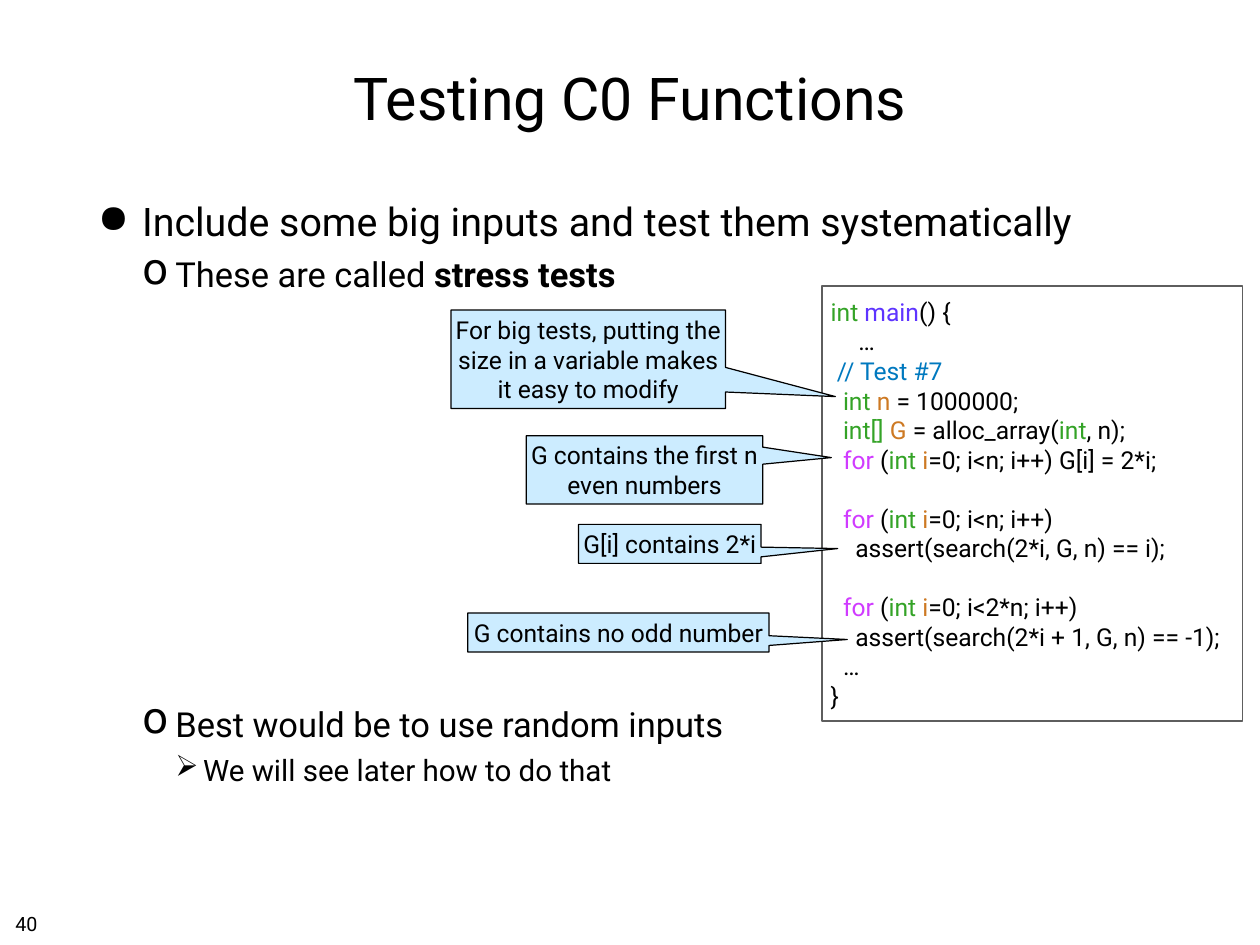
from dataclasses import dataclass

from lxml import etree
from pptx import Presentation
from pptx import util as u
from pptx.dml.color import RGBColor
from pptx.enum import shapes, text
from pptx.oxml import ns

Pt = u.Pt


@dataclass(frozen=True)
class Theme:
    font: str = "Roboto"
    ink: str = "000000"
    edge: str = "5E5E5E"
    note: str = "CCECFF"
    kind: str = "34A327"
    name: str = "5E34FF"
    var: str = "CD7923"
    word: str = "D03BFF"
    mark: str = "0079BF"
    title: int = 48
    levels: tuple = (32, 28, 24)
    code: int = 20
    page: int = 16


T = Theme()
LINE = 1.2  # line height as a share of the type size


def apply(obj, values):
    for key, val in values.items():
        setattr(obj, key, val)


def write(par, words, size, color=T.ink, bold=False):
    """Add text to a paragraph; a newline becomes a line break."""
    for i, part in enumerate(words.split("\n")):
        if i:
            par.add_line_break()
        run = par.add_run()
        run.text = part
        apply(run.font, {"name": T.font, "size": Pt(size), "bold": bold})
        run.font.color.rgb = RGBColor.from_string(color)


def setup(shape, inset, wrap=True, anchor="TOP", fit="NONE"):
    frame = shape.text_frame
    sides = ("left", "right", "top", "bottom")
    apply(frame, {f"margin_{side}": Pt(inset) for side in sides})
    apply(frame, {"word_wrap": wrap,
                  "vertical_anchor": text.MSO_ANCHOR[anchor],
                  "auto_size": text.MSO_AUTO_SIZE[fit]})
    return frame


def label(slide, box, inset=4.5, **format):
    return setup(slide.shapes.add_textbox(*map(Pt, box)), inset, **format)


def panel(slide, form, box, line, fill=None):
    shape = slide.shapes.add_shape(form, *map(Pt, box))
    shape.shadow.inherit = False
    if fill:
        shape.fill.solid()
        shape.fill.fore_color.rgb = RGBColor.from_string(fill)
    else:
        shape.fill.background()
    shape.line.color.rgb = RGBColor.from_string(line)
    shape.line.width = Pt(1)
    return shape


def pars(frame, count):
    """Return the first paragraph and as many new ones as needed."""
    return [frame.paragraphs[0]] + [frame.add_paragraph() for _ in range(count - 1)]


def bullet(par, sign, left, hang, scale):
    props = par._p.get_or_add_pPr()
    props.set("marL", str(Pt(left)))
    props.set("indent", str(Pt(-hang)))
    tint = etree.SubElement(props, ns.qn("a:buClr"))
    etree.SubElement(tint, ns.qn("a:srgbClr"), val=T.ink)
    etree.SubElement(props, ns.qn("a:buSzPct"), val=str(scale * 1000))
    etree.SubElement(props, ns.qn("a:buChar"), char=sign)


# Title
def title(slide, box):
    par = label(slide, box, anchor="MIDDLE").paragraphs[0]
    par.alignment = text.PP_ALIGN.CENTER
    write(par, "Testing C0 Functions", T.title)


# Bullet list, with room left for the code
def points(slide, box):
    marks = [("●", 36, 36, 100), ("o", 63, 27, 125), ("➢", 85.5, 22.5, 100)]
    room = 8 * (T.levels[1] * LINE + 7) + 7
    items = [
        (0, 8, [("Include some big inputs and test them systematically", False)]),
        (1, 7, [("These are called ", False), ("stress tests", True)]),
        (1, room, [("Best would be to use random inputs", False)]),
        (2, 6, [("We will see later how to do that", False)]),
    ]
    frame = label(slide, box)
    for par, (level, gap, runs) in zip(pars(frame, len(items)), items):
        apply(par, {"level": level, "space_before": Pt(gap)})
        bullet(par, *marks[level])
        for words, bold in runs:
            write(par, words, T.levels[level], bold=bold)


# Code listing
def code(slide, box):
    blank = T.code * LINE
    loop = [("for ", T.word), ("(", T.ink), ("int ", T.kind), ("i", T.var)]
    # left indent, space before, coloured runs
    lines = [
        (0, 0, [("int ", T.kind), ("main", T.name), ("() {", T.ink)]),
        (22.5, 0, [("…", T.ink)]),
        (5, 0, [("// Test #7", T.mark)]),
        (10, 0, [("int ", T.kind), ("n", T.var), (" = 1000000;", T.ink)]),
        (10, 0, [("int[] ", T.kind), ("G", T.var), (" = alloc_array(", T.ink),
                 ("int", T.kind), (", n);", T.ink)]),
        (10, 0, loop + [("=0; i<n; i++) G[i] = 2*i;", T.ink)]),
        (10, blank, loop + [("=0; i<n; i++)", T.ink)]),
        (20, 0, [("assert(search(2*i, G, n) == i);", T.ink)]),
        (10, blank, loop + [("=0; i<2*n; i++)", T.ink)]),
        (20, 0, [("assert(search(2*i + 1, G, n) == -1);", T.ink)]),
        (10, 0, [("…", T.ink)]),
        (0, 0, [("}", T.ink)]),
    ]
    shape = panel(slide, shapes.MSO_SHAPE.RECTANGLE, box, T.edge)
    frame = setup(shape, 7.2, anchor="MIDDLE", fit="SHAPE_TO_FIT_TEXT")
    for par, (left, gap, runs) in zip(pars(frame, len(lines)), lines):
        apply(par, {"alignment": text.PP_ALIGN.LEFT, "space_before": Pt(gap)})
        par._p.get_or_add_pPr().set("marL", str(Pt(left)))
        for words, color in runs:
            write(par, words, T.code, color)


# Callout whose tip is given as a share of its size, from its centre
def note(slide, box, tip, words):
    form = shapes.MSO_SHAPE.RECTANGULAR_CALLOUT
    shape = panel(slide, form, box, T.ink, T.note)
    for i, share in enumerate(tip):
        shape.adjustments[i] = share
    frame = setup(shape, 3.6, False, "MIDDLE", "SHAPE_TO_FIT_TEXT")
    par = frame.paragraphs[0]
    par.alignment = text.PP_ALIGN.CENTER
    write(par, words, T.code)


# Page number
def page(slide, box):
    write(label(slide, box, wrap=False).paragraphs[0], "40", T.page)


def main():
    deck = Presentation()
    apply(deck, {"slide_width": Pt(1024), "slide_height": Pt(768)})
    slide = deck.slides.add_slide(deck.slide_layouts[6])
    title(slide, (75, 20, 874, 118))
    points(slide, (75, 156, 874, 543))
    code(slide, (668, 232.5, 342, 353.5))
    notes = [
        ((427.7, 354.2, 192.2, 55.4), (0.79, -0.18),
         "G contains the first n\neven numbers"),
        ((366.5, 252, 223.2, 79.9), (0.9, 0.38),
         "For big tests, putting the\nsize in a variable makes\nit easy to modify"),
        ((470.2, 426.2, 148.3, 31.7), (0.92, 0.12), "G[i] contains 2*i"),
        ((380.2, 498.2, 244.8, 31.7), (0.76, 0.18), "G contains no odd number"),
    ]
    for item in notes:
        note(slide, *item)
    page(slide, (8, 736.5, 26.5, 25))
    deck.save("out.pptx")


if __name__ == "__main__":
    main()
